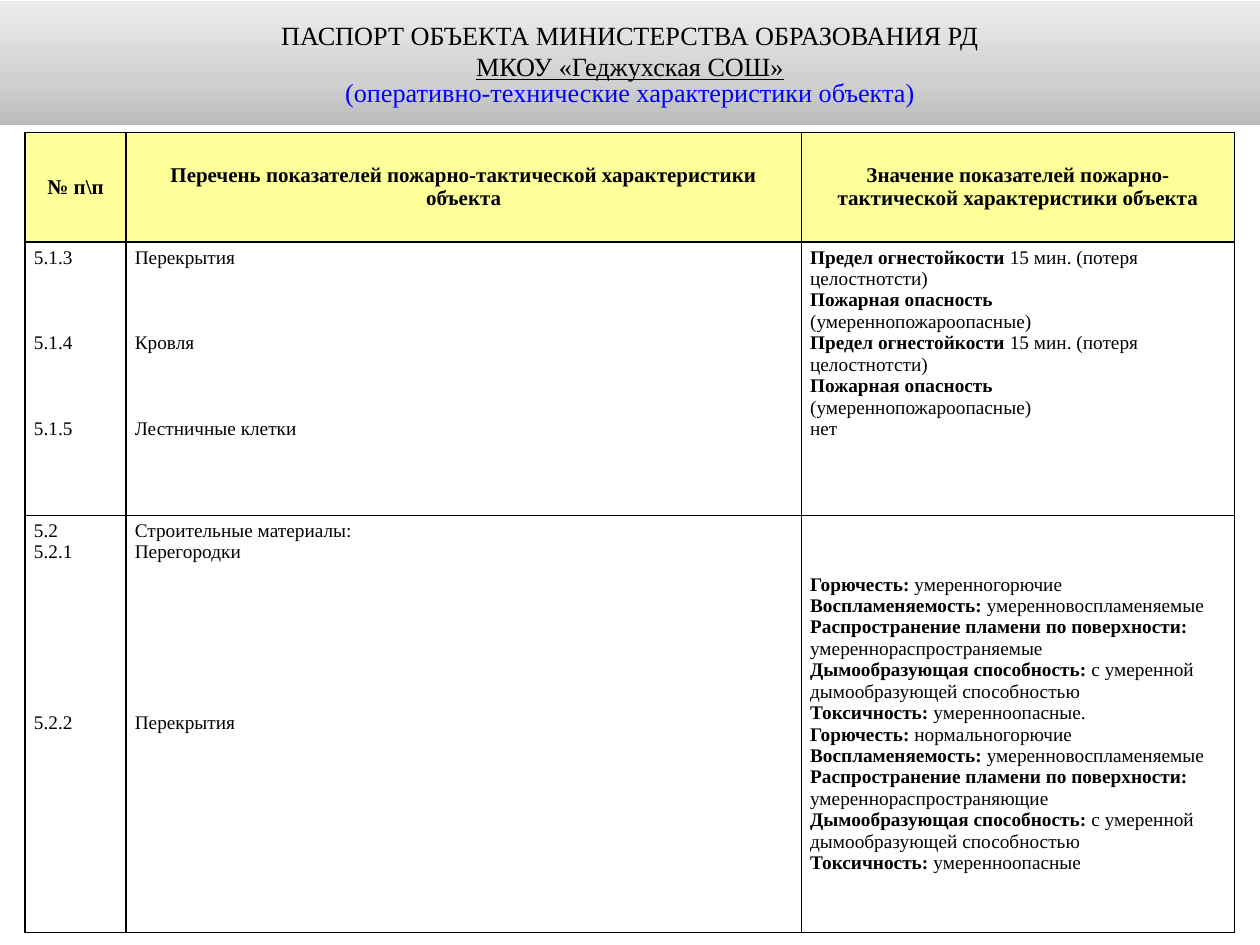
"""Builds a slide with the fire-safety passport table of a school."""
import pptx
import pptx.util
import pptx.dml.color
import pptx.enum.shapes
import pptx.enum.text
import lxml.etree
from pptx.util import Inches, Pt

RGBColor = pptx.dml.color.RGBColor
BLACK = RGBColor(0, 0, 0)
BLUE = RGBColor(0, 0, 255)
WHITE = RGBColor(255, 255, 255)
YELLOW = RGBColor(255, 255, 153)
GRADIENT = [(0, RGBColor(0xBC, 0xBC, 0xBC)), (35, RGBColor(0xD0, 0xD0, 0xD0)),
            (100, RGBColor(0xED, 0xED, 0xED))]
FONT = "Times New Roman"
CENTER = pptx.enum.text.PP_ALIGN.CENTER
LEFT = pptx.enum.text.PP_ALIGN.LEFT
MIDDLE = pptx.enum.text.MSO_ANCHOR.MIDDLE
TOP = pptx.enum.text.MSO_ANCHOR.TOP
LINE = 12.2


def add_run(p, text, size, bold=False, color=BLACK):
    r = p.add_run()
    r.text = text
    r.font.name = FONT
    r.font.size = Pt(size)
    r.font.bold = bold
    r.font.color.rgb = color
    return r


def add_borders(cell):
    props = cell._tc.get_or_add_tcPr()
    for i, side in enumerate(("lnL", "lnR", "lnT", "lnB")):
        ln = lxml.etree.Element(pptx.oxml.ns.qn(f"a:{side}"), w=str(Pt(1)))
        fill = lxml.etree.SubElement(ln, pptx.oxml.ns.qn("a:solidFill"))
        lxml.etree.SubElement(fill, pptx.oxml.ns.qn("a:srgbClr"), val=str(BLACK))
        props.insert(i, ln)


prs = pptx.Presentation()
prs.slide_width, prs.slide_height = Inches(10), Inches(7.5)
s = prs.slides.add_slide(prs.slide_layouts[6])

# Each paragraph is (empty lines before it, bold text, plain text).
limits = [
    (0, "Предел огнестойкости ", "15 мин. (потеря целостнотсти)"),
    (0, "Пожарная опасность", ""),
    (0, "", "(умереннопожароопасные)"),
]
materials = []
for burning, spreading, toxicity in (
        ("умеренногорючие", "умереннораспространяемые", "умеренноопасные."),
        ("нормальногорючие", "умереннораспространяющие", "умеренноопасные")):
    materials += [
        (0, "Горючесть:", " " + burning),
        (0, "Воспламеняемость: ", "умеренновоспламеняемые"),
        (0, "Распространение пламени по поверхности:", ""),
        (0, "", spreading),
        (0, "Дымообразующая способность: ", "с умеренной дымообразующей способностью"),
        (0, "Токсичность:", " " + toxicity),
    ]
rows = [
    [[(0, "№ п\\п", "")],
     [(0, "Перечень показателей пожарно-тактической характеристики объекта", "")],
     [(0, "Значение показателей пожарно-тактической характеристики объекта", "")]],
    [[(0, "", "5.1.3"), (3, "", "5.1.4"), (3, "", "5.1.5")],
     [(0, "", "Перекрытия"), (3, "", "Кровля"), (3, "", "Лестничные клетки")],
     limits * 2 + [(0, "", "нет")]],
    [[(0, "", "5.2"), (0, "", "5.2.1"), (7, "", "5.2.2")],
     [(0, "", "Строительные материалы:"), (0, "", "Перегородки"), (7, "", "Перекрытия")],
     materials],
]

table = s.shapes.add_table(3, 3, Inches(0.2), Inches(1.05), Inches(9.6), Inches(6.35)).table
for column, width in zip(table.columns, (0.8, 5.36, 3.44)):
    column.width = Inches(width)
for row, height in zip(table.rows, (0.87, 2.17, 3.31)):
    row.height = Inches(height)

for i, row in enumerate(rows):
    for j, paragraphs in enumerate(row):
        cell = table.cell(i, j)
        header = i == 0
        cell.fill.solid()
        cell.fill.fore_color.rgb = YELLOW if header else WHITE
        cell.margin_left = cell.margin_right = Inches(0.07)
        cell.margin_top = cell.margin_bottom = Inches(0.04)
        cell.vertical_anchor = MIDDLE if header or paragraphs is materials else TOP
        add_borders(cell)
        tf = cell.text_frame
        for k, (gap, bold, plain) in enumerate(paragraphs):
            p = tf.add_paragraph() if k else tf.paragraphs[0]
            p.alignment = CENTER if header else LEFT
            if gap:
                p.space_before = Pt(gap * LINE)
            for text, is_bold in ((bold, True), (plain, False)):
                if text:
                    add_run(p, text, 12 if header else 11, is_bold)

sp = s.shapes.add_shape(pptx.enum.shapes.MSO_SHAPE.RECTANGLE,
                        Inches(0), Inches(0.01), Inches(10), Inches(0.98))
sp.shadow.inherit = False
sp.line.fill.background()
sp.fill.gradient()
sp.fill.gradient_angle = 90
stops = sp.fill._fill._gradFill.gsLst
for stop in list(stops):
    stops.remove(stop)
for position, color in GRADIENT:
    stop = lxml.etree.SubElement(stops, pptx.oxml.ns.qn("a:gs"), pos=str(position * 1000))
    lxml.etree.SubElement(stop, pptx.oxml.ns.qn("a:srgbClr"), val=str(color))

tf = sp.text_frame
tf.word_wrap = True
tf.vertical_anchor = MIDDLE
tf.margin_left = tf.margin_right = Inches(0.09)
tf.margin_top = tf.margin_bottom = Inches(0.05)
p = tf.paragraphs[0]
p.alignment = CENTER
add_run(p, "ПАСПОРТ ОБЪЕКТА МИНИСТЕРСТВА ОБРАЗОВАНИЯ РД", 15)
p = tf.add_paragraph()
p.alignment = CENTER
add_run(p, "МКОУ «Геджухская СОШ»", 15).font.underline = True
p = tf.add_paragraph()
p.alignment = CENTER
p.line_spacing = 0.8
add_run(p, "(оперативно-технические характеристики объекта)", 15, color=BLUE)
prs.save("out.pptx")
